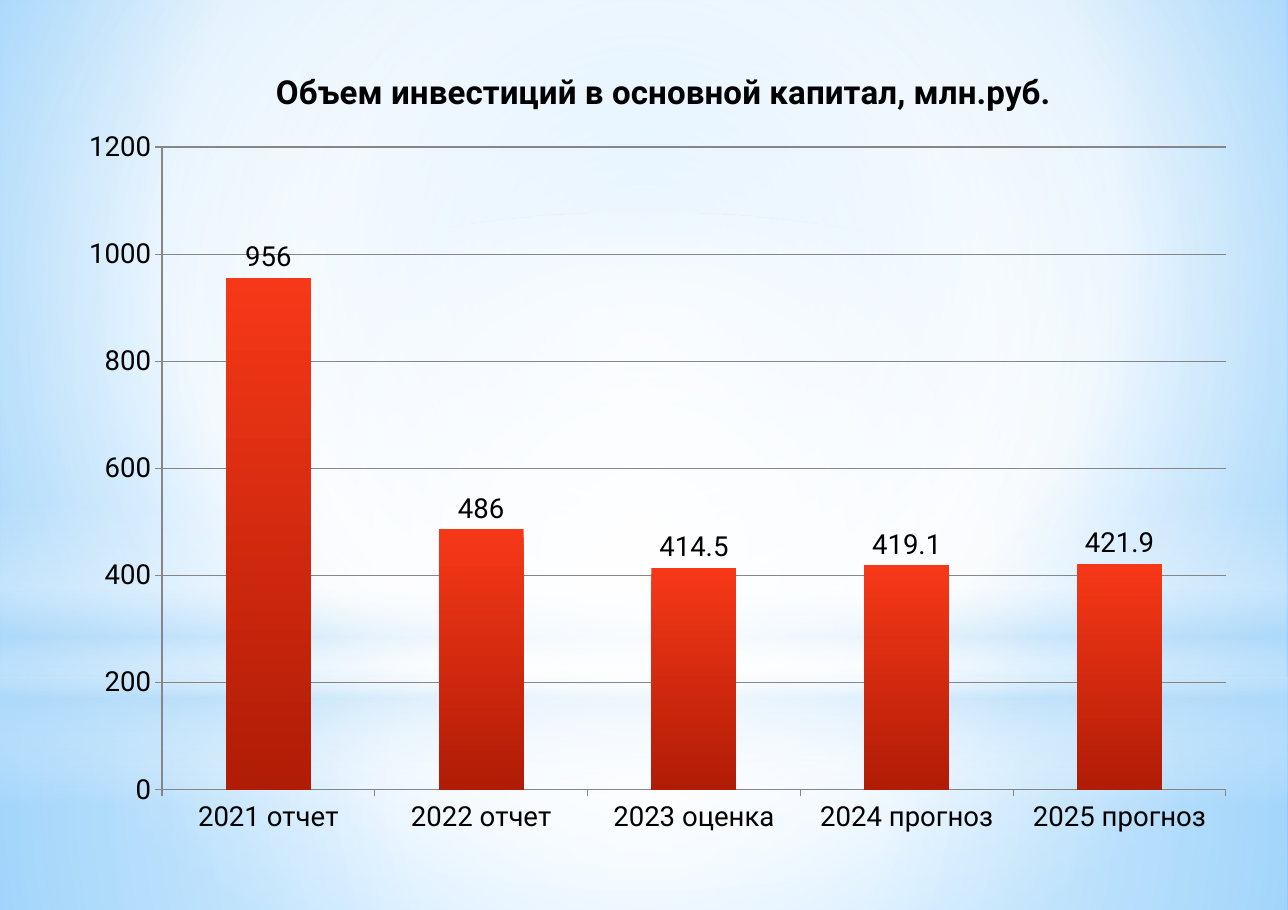
"""Build a slide with a column chart of fixed capital investment, 2021 to 2025."""
from pptx import Presentation
from pptx import util as u
from pptx.chart.data import CategoryChartData
from pptx.dml.color import RGBColor
from pptx.enum import chart as ch
from pptx.enum import shapes
from pptx.oxml import parse_xml
from pptx.oxml.ns import nsdecls, qn

PX = 8298
WIDTH, HEIGHT = 1288, 910
CHART_LEFT, CHART_TOP, CHART_WIDTH, CHART_HEIGHT = 66, 33, 1185, 818
FONT = "Roboto"
BLACK = RGBColor(0x00, 0x00, 0x00)
GRID_GREY = RGBColor(0x86, 0x86, 0x86)
WHITE = RGBColor(0xFF, 0xFF, 0xFF)
PALE_BLUE = RGBColor(0xB4, 0xDC, 0xFA)
SKY = RGBColor(0x9E, 0xD5, 0xFF)
DEEP_SKY = RGBColor(0x5B, 0xB9, 0xFF)
BAR_TOP = RGBColor(0xF6, 0x38, 0x18)
BAR_BOTTOM = RGBColor(0xB0, 0x1C, 0x06)
CENTRE = (50, 50, 50, 50)
TITLE = "Объем инвестиций в основной капитал, млн.руб."
INVESTMENT = {
    "2021 отчет": 956,
    "2022 отчет": 486,
    "2023 оценка": 414.5,
    "2024 прогноз": 419.1,
    "2025 прогноз": 421.9,
}


def paint_gradient(fill, owner, stops, focus=None):
    """Fill with (position, colour, opacity) stops, radial if a focus is given."""
    fill.gradient()
    stop_xml = "".join(
        f'<a:gs pos="{position * 1000}"><a:srgbClr val="{colour}">'
        f'<a:alpha val="{opacity * 1000}"/></a:srgbClr></a:gs>'
        for position, colour, opacity in stops)
    if focus:
        sides = " ".join(f'{side}="{inset * 1000}"' for side, inset in zip("ltrb", focus))
        direction = f'<a:path path="circle"><a:fillToRect {sides}/></a:path>'
    else:
        direction = '<a:lin ang="5400000" scaled="0"/>'
    gradient = next(owner.iter(qn("a:gradFill")))
    gradient.getparent().replace(gradient, parse_xml(
        f'<a:gradFill {nsdecls("a")} rotWithShape="1">'
        f'<a:gsLst>{stop_xml}</a:gsLst>{direction}</a:gradFill>'))


def set_layout(parent, index, left, top, size=None):
    """Place a chart part at slide px, with an optional inner size."""
    for old in parent.findall(qn("c:layout")):
        parent.remove(old)
    parts = {"x": (left - CHART_LEFT) / CHART_WIDTH, "y": (top - CHART_TOP) / CHART_HEIGHT}
    if size:
        parts.update(w=size[0] / CHART_WIDTH, h=size[1] / CHART_HEIGHT)
    target = '<c:layoutTarget val="inner"/>' if size else ""
    modes = '<c:xMode val="edge"/><c:yMode val="edge"/>'
    values = "".join(f'<c:{key} val="{value:.4f}"/>' for key, value in parts.items())
    parent.insert(index, parse_xml(
        f'<c:layout {nsdecls("c")}><c:manualLayout>{target}{modes}{values}'
        '</c:manualLayout></c:layout>'))


deck = Presentation()
deck.slide_width, deck.slide_height = WIDTH * PX, HEIGHT * PX
slide = deck.slides.add_slide(deck.slide_layouts[6])
paint_gradient(slide.background.fill, slide.element,
               [(0, SKY, 100), (60, WHITE, 100), (100, DEEP_SKY, 100)], (20, 10, 20, 60))

RECT, OVAL = shapes.MSO_SHAPE.RECTANGLE, shapes.MSO_SHAPE.OVAL
glows = [
    (RECT, 678, 232, [(0, WHITE, 91), (37, WHITE, 76), (100, PALE_BLUE, 79)], CENTRE),
    (RECT, 0, 678, [(0, WHITE, 89), (48, WHITE, 62), (100, PALE_BLUE, 79)], CENTRE),
    (RECT, 500, 303, [(0, WHITE, 0), (29, WHITE, 30), (45, PALE_BLUE, 40),
                      (55, WHITE, 26), (65, PALE_BLUE, 60), (100, WHITE, 0)], None),
    (OVAL, 213, 678, [(0, WHITE, 100), (56, WHITE, 0)], CENTRE),
]
for outline, top, height, stops, focus in glows:
    glow = slide.shapes.add_shape(outline, 0, top * PX, WIDTH * PX, height * PX)
    glow.shadow.inherit = False
    glow.line.fill.background()
    paint_gradient(glow.fill, glow.element, stops, focus)

investment_data = CategoryChartData()
investment_data.categories = list(INVESTMENT)
investment_data.add_series(TITLE, list(INVESTMENT.values()))
chart = slide.shapes.add_chart(
    ch.XL_CHART_TYPE.COLUMN_CLUSTERED, CHART_LEFT * PX, CHART_TOP * PX,
    CHART_WIDTH * PX, CHART_HEIGHT * PX, investment_data).chart
chart.has_legend = False
chart.font.name, chart.font.size = FONT, u.Pt(18)
chart.font.color.rgb = BLACK

chart.has_title = True
heading = chart.chart_title.text_frame.paragraphs[0].add_run()
heading.text = TITLE
heading.font.name, heading.font.size, heading.font.bold = FONT, u.Pt(21.6), True
heading.font.color.rgb = BLACK
set_layout(next(chart.element.iter(qn("c:title"))), 1, 270, 64)
set_layout(next(chart.element.iter(qn("c:plotArea"))), 0, 162, 147, (1064, 643))

columns = chart.plots[0]
columns.gap_width = 150
columns.vary_by_categories = False
paint_gradient(columns.series[0].format.fill, chart.element,
               [(0, BAR_TOP, 100), (100, BAR_BOTTOM, 100)])
columns.has_data_labels = True
columns.data_labels.show_value = True
columns.data_labels.position = ch.XL_LABEL_POSITION.OUTSIDE_END

amounts, years = chart.value_axis, chart.category_axis
amounts.minimum_scale, amounts.maximum_scale, amounts.major_unit = 0, 1200, 200
amounts.has_major_gridlines = True
for axis in (amounts, years):
    axis.major_tick_mark = ch.XL_TICK_MARK.OUTSIDE
for ruled in (amounts, years, amounts.major_gridlines):
    ruled.format.line.color.rgb = GRID_GREY
    ruled.format.line.width = u.Pt(0.75)

deck.save("out.pptx")
